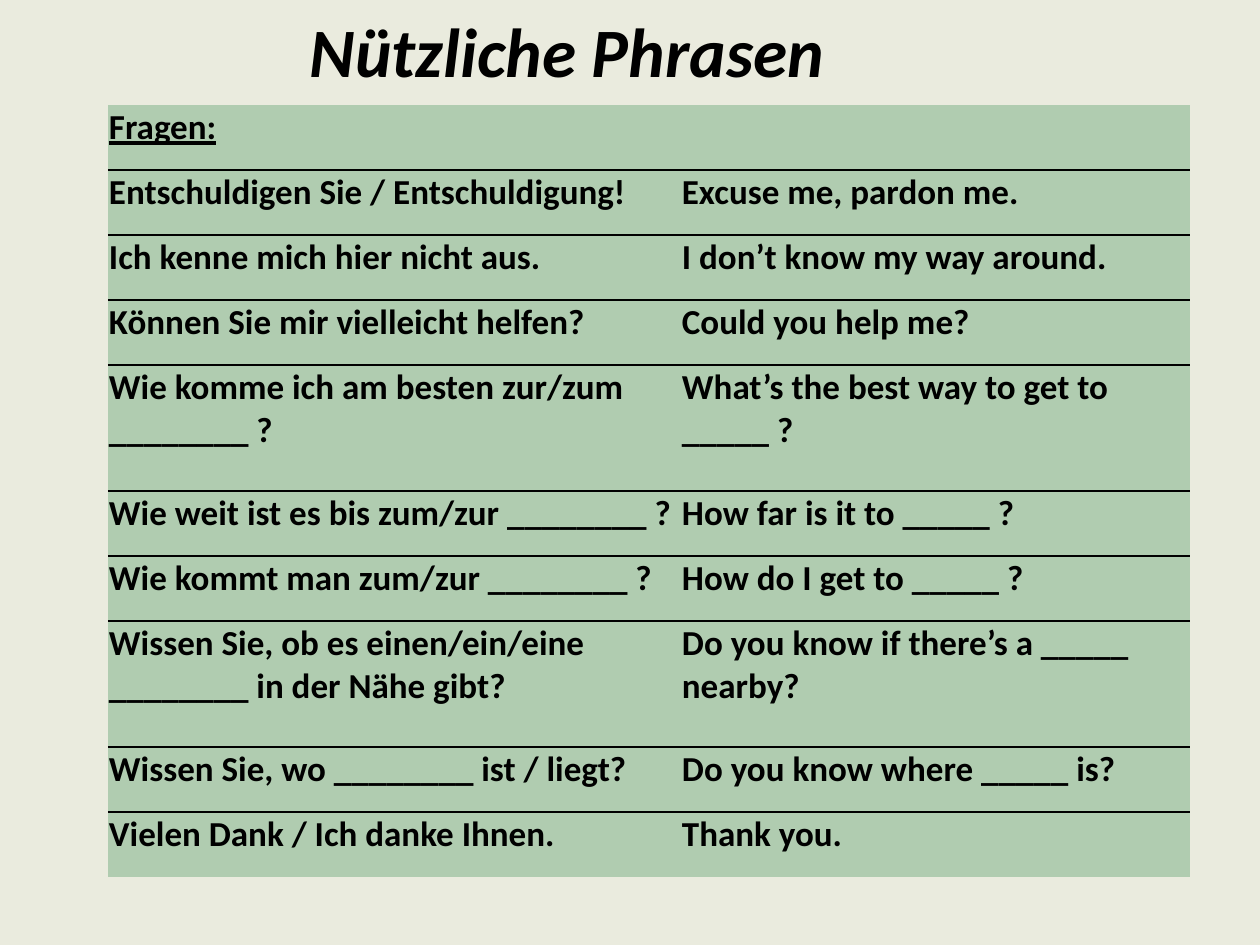
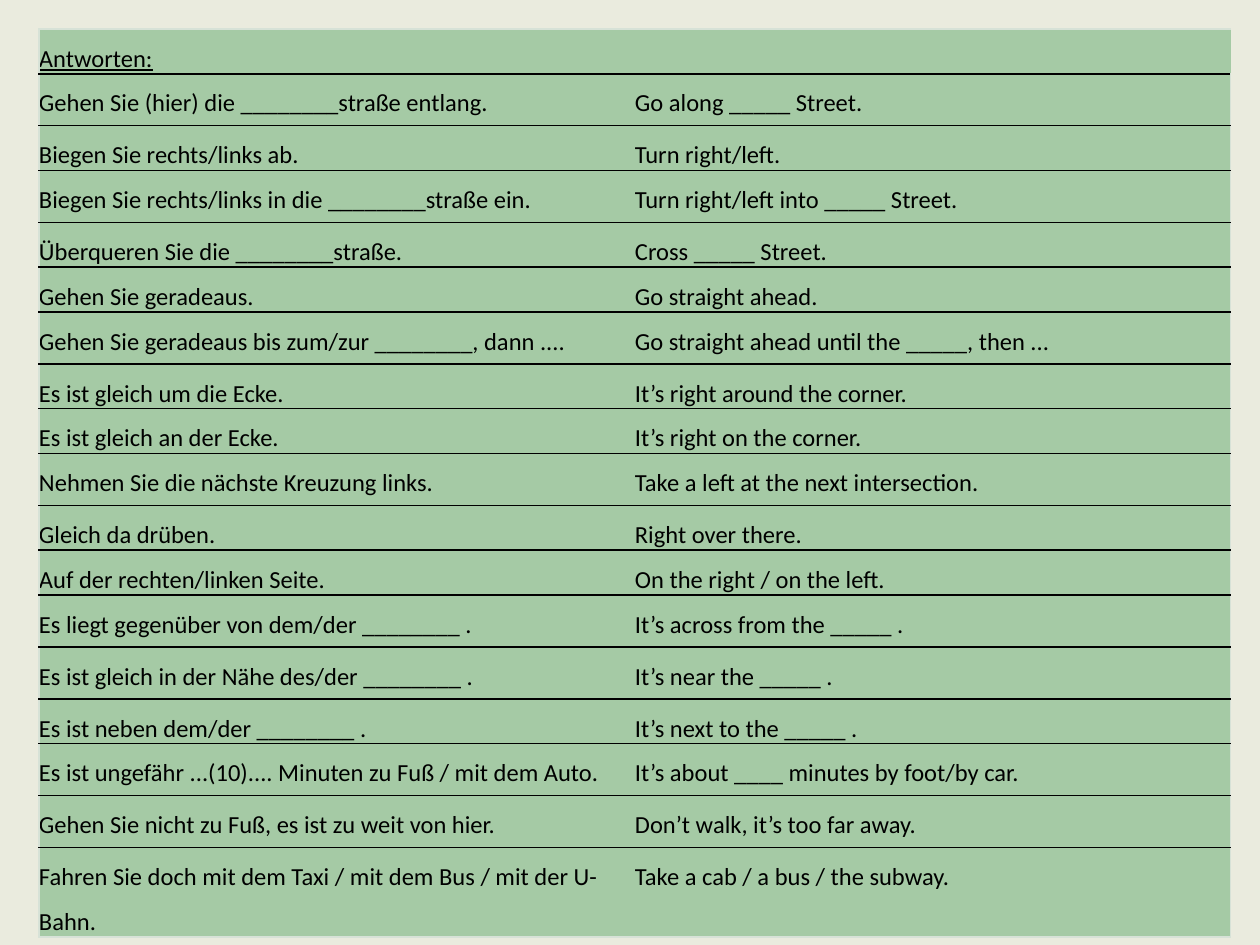
from dataclasses import dataclass

from lxml import etree
from pptx import Presentation
from pptx import util as u
from pptx.dml.color import RGBColor
from pptx.enum import text
from pptx.oxml import ns

PX = u.Inches(1) // 126


@dataclass(frozen=True)
class Theme:
    """Colours, font and type sizes shared by the slides."""
    font: str = "Calibri"
    page: str = "EAEBDE"
    ink: str = "000000"
    question_fill: str = "B0CCB0"
    answer_fill: str = "A5CAA5"
    outline: str = "D7E2D7"
    title_size: float = 39.6
    question_size: int = 20
    answer_size: int = 14
    rule_width: float = 1
    outline_width: float = 0.75


@dataclass(frozen=True)
class PhraseStyle:
    """Look of one phrase table, with lengths in px."""
    fill: str
    size: int
    row: int
    tall_row: int
    inset: int = 0
    bold: bool = False
    spacing: float = 1.0
    outline: str | None = None


THEME = Theme()
QUESTION_STYLE = PhraseStyle(THEME.question_fill, THEME.question_size, 65, 126,
                             inset=1, bold=True)
ANSWER_STYLE = PhraseStyle(THEME.answer_fill, THEME.answer_size, 42, 52,
                           spacing=1.5, outline=THEME.outline)

QUESTIONS = [
    ("Entschuldigen Sie / Entschuldigung!", "Excuse me, pardon me."),
    ("Ich kenne mich hier nicht aus.", "I don’t know my way around."),
    ("Können Sie mir vielleicht helfen?", "Could you help me?"),
    ("Wie komme ich am besten zur/zum ________ ?", "What’s the best way to get to _____ ?"),
    ("Wie weit ist es bis zum/zur ________ ?", "How far is it to _____ ?"),
    ("Wie kommt man zum/zur ________ ?", "How do I get to _____ ?"),
    ("Wissen Sie, ob es einen/ein/eine ________ in der Nähe gibt?",
     "Do you know if there’s a _____ nearby?"),
    ("Wissen Sie, wo ________ ist / liegt?", "Do you know where _____ is?"),
    ("Vielen Dank / Ich danke Ihnen.", "Thank you."),
]
TALL_QUESTIONS = {4, 7}

ANSWERS = [
    ("Gehen Sie (hier) die ________straße entlang.", "Go along _____ Street."),
    ("Biegen Sie rechts/links ab.", "Turn right/left."),
    ("Biegen Sie rechts/links in die ________straße ein.", "Turn right/left into _____ Street."),
    ("Überqueren Sie die ________straße.", "Cross _____ Street."),
    ("Gehen Sie geradeaus.", "Go straight ahead."),
    ("Gehen Sie geradeaus bis zum/zur ________, dann ....",
     "Go straight ahead until the _____, then ..."),
    ("Es ist gleich um die Ecke.", "It’s right around the corner."),
    ("Es ist gleich an der Ecke.", "It’s right on the corner."),
    ("Nehmen Sie die nächste Kreuzung links.", "Take a left at the next intersection."),
    ("Gleich da drüben.", "Right over there."),
    ("Auf der rechten/linken Seite.", "On the right / on the left."),
    ("Es liegt gegenüber von dem/der ________ .", "It’s across from the _____ ."),
    ("Es ist gleich in der Nähe des/der ________ .", "It’s near the _____ ."),
    ("Es ist neben dem/der ________ .", "It’s next to the _____ ."),
    ("Es ist ungefähr ...(10).... Minuten zu Fuß / mit dem Auto.",
     "It’s about ____ minutes by foot/by car."),
    ("Gehen Sie nicht zu Fuß, es ist zu weit von hier.", "Don’t walk, it’s too far away."),
    ("Fahren Sie doch mit dem Taxi / mit dem Bus / mit der U-Bahn.",
     "Take a cab / a bus / the subway."),
]
TALL_ANSWERS = {1, 3, 6, 9, 12, 13, 15, 16, 17}


def px(length):
    """Turn px into EMU."""
    return u.Emu(length * PX)


def style_font(font, size, bold=False, italic=False, underline=False):
    """Apply the shared typeface and ink to a font."""
    font.name = THEME.font
    font.size = u.Pt(size)
    font.bold = bold
    font.italic = italic
    font.underline = underline
    font.color.rgb = RGBColor.from_string(THEME.ink)


def add_title(page, words, left, top, width, height):
    """Place and format the title placeholder."""
    title = page.shapes.title
    title.left, title.top, title.width, title.height = map(px, (left, top, width, height))
    frame = title.text_frame
    frame.text = words
    frame.vertical_anchor = text.MSO_ANCHOR.MIDDLE
    paragraph = frame.paragraphs[0]
    paragraph.alignment = text.PP_ALIGN.CENTER
    style_font(paragraph.font, THEME.title_size, bold=True, italic=True)


def set_border(cell, side, color, width):
    """Draw one cell edge, or hide it when there is no colour."""
    props = cell._tc.get_or_add_tcPr()
    line = etree.SubElement(props, ns.qn(f"a:ln{side}"), w=str(u.Pt(width)))
    if color:
        fill = etree.SubElement(line, ns.qn("a:solidFill"))
        etree.SubElement(fill, ns.qn("a:srgbClr"), val=color)
    else:
        etree.SubElement(line, ns.qn("a:noFill"))


def set_borders(cell, style, first_row, last_row, first_column, last_column):
    """Rule between rows and outline the outer edges of the table."""
    outer = (style.outline, THEME.outline_width)
    rule = (THEME.ink, THEME.rule_width)
    hidden = (None, THEME.outline_width)
    set_border(cell, "L", *(outer if first_column else hidden))
    set_border(cell, "R", *(outer if last_column else hidden))
    set_border(cell, "T", *(outer if first_row else rule))
    set_border(cell, "B", *(outer if last_row else rule))


def fill_cell(cell, words, style, heading):
    """Write one phrase and colour its cell."""
    cell.margin_left = cell.margin_right = px(style.inset)
    cell.margin_top = cell.margin_bottom = px(style.inset)
    cell.fill.solid()
    cell.fill.fore_color.rgb = RGBColor.from_string(style.fill)
    cell.text = words
    paragraph = cell.text_frame.paragraphs[0]
    paragraph.line_spacing = style.spacing
    style_font(paragraph.font, style.size, bold=style.bold, underline=heading)


def add_phrases(page, heading, phrases, tall_rows, left, top, widths, style):
    """Add a two-language table under a merged heading row."""
    rows = [(heading, ""), *phrases]
    heights = [style.tall_row if index in tall_rows else style.row
               for index in range(len(rows))]
    table = page.shapes.add_table(len(rows), len(widths), px(left), px(top),
                                  px(sum(widths)), px(sum(heights))).table
    table.first_row = table.horz_banding = False
    for column, width in zip(table.columns, widths):
        column.width = px(width)
    for row, (phrase, height) in enumerate(zip(rows, heights)):
        table.rows[row].height = px(height)
        for column, words in enumerate(phrase):
            cell = table.cell(row, column)
            set_borders(cell, style, row == 0, row == len(rows) - 1,
                        column == 0, column == len(widths) - 1)
            fill_cell(cell, words, style, heading=row == 0)
    table.cell(0, 0).merge(table.cell(0, len(widths) - 1))


def main():
    """Build the question and answer slides."""
    deck = Presentation()
    deck.slide_width, deck.slide_height = px(1260), px(945)
    background = deck.slide_master.background.fill
    background.solid()
    background.fore_color.rgb = RGBColor.from_string(THEME.page)
    title_only = deck.slide_layouts.get_by_name("Title Only")
    blank = deck.slide_layouts.get_by_name("Blank")

    page = deck.slides.add_slide(title_only)
    add_title(page, "Nützliche Phrasen", 0, 0, 1134, 100)
    add_phrases(page, "Fragen:", QUESTIONS, TALL_QUESTIONS,
                108, 105, (573, 509), QUESTION_STYLE)

    page = deck.slides.add_slide(blank)
    add_phrases(page, "Antworten:", ANSWERS, TALL_ANSWERS,
                39, 29, (596, 596), ANSWER_STYLE)
    deck.save("out.pptx")


if __name__ == "__main__":
    main()
